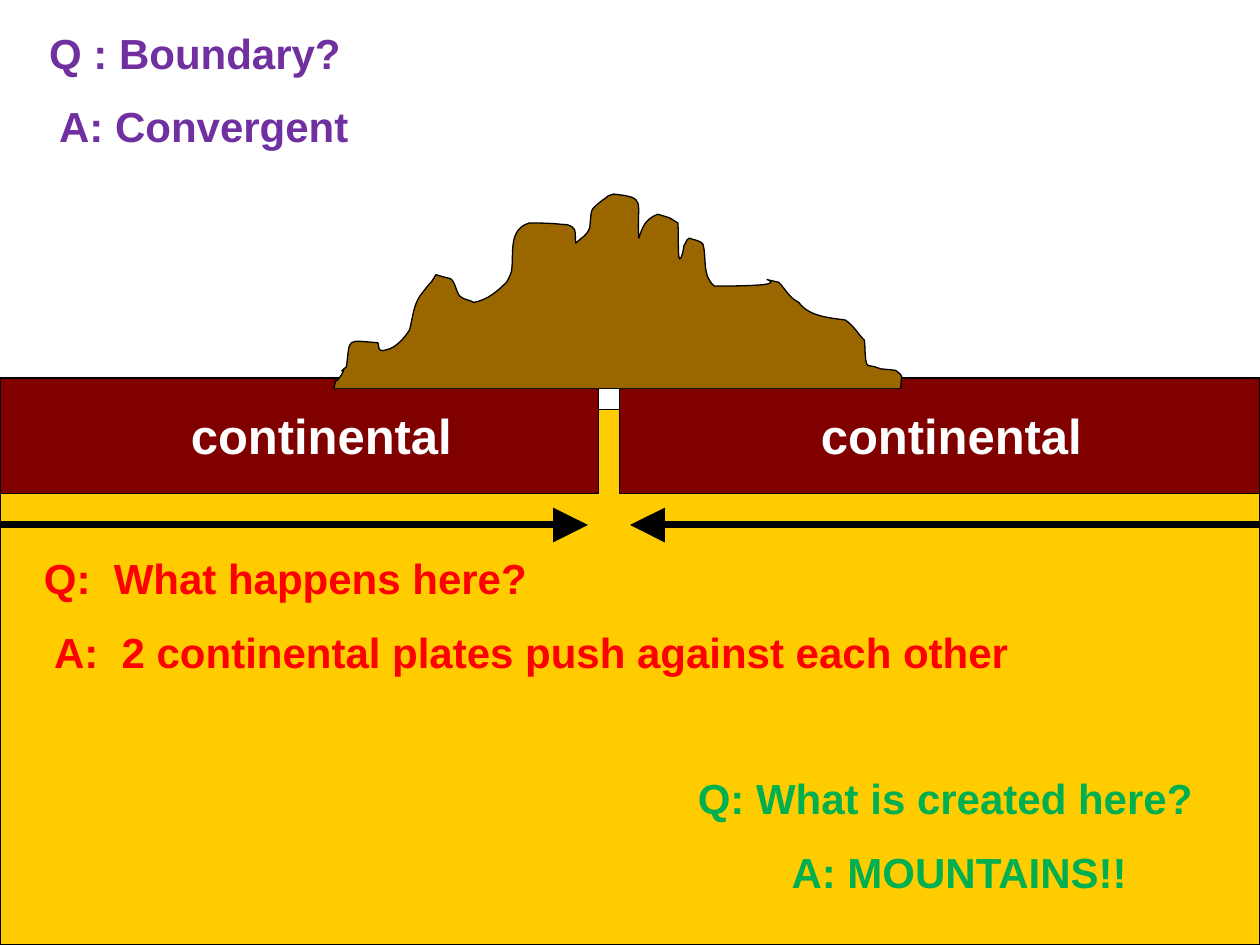
from dataclasses import dataclass

from lxml.etree import SubElement
from pptx import Presentation
from pptx.dml.color import RGBColor
from pptx.enum.shapes import MSO_CONNECTOR, MSO_SHAPE
from pptx.oxml.ns import qn
from pptx.util import Pt

BLACK, WHITE = "000000", "FFFFFF"
MANTLE, PLATE, ROCK = "FFCC00", "800000", "996600"
PURPLE, RED, GREEN = "7030A0", "FF0000", "00B050"
OUTLINE_WIDTH = 0.75
GRID = 0.72  # points per unit of the mountain grid


@dataclass(frozen=True)
class Block:
    left: float
    top: float
    width: float
    height: float
    color: str


@dataclass(frozen=True)
class Label:
    text: str
    left: float
    top: float
    width: float
    color: str
    size: float = 24
    height: float = 36


@dataclass(frozen=True)
class Line:
    start: float
    end: float
    y: float
    width: float
    arrow: bool = True


BLOCKS = [
    Block(0, 234, 720, 306, MANTLE),
    Block(0, 216, 342, 66, PLATE),
    Block(354, 216, 366, 66, PLATE),
]
LINES = [
    Line(0, 336, 300, 4),
    Line(720, 360, 300, 4),
    Line(190.8, 514.8, 222, OUTLINE_WIDTH, arrow=False),
]
LABELS = [
    *(Label("continental", left, 228, 216, WHITE, 28, 41) for left in (102, 462)),
    Label("A: MOUNTAINS!!", 445.2, 480, 214, GREEN),
    Label("Q:  What happens here?", 18, 312, 420, RED),
    Label("A:  2 continental plates push against each other", 23.8, 354.4, 714, RED),
    Label("Q: What is created here?", 391.7, 438, 534, GREEN),
    Label("Q : Boundary?", 21, 12, 387, PURPLE),
    Label("A: Convergent", 26.7, 54, 382, PURPLE),
]

# Mountain outline: start, then two control points and an end for each curve
MOUNTAIN_START = (265, 308)
MOUNTAIN_CURVES = [
    (269, 293, 263, 309, 270, 299), (278, 287, 265, 300, 275, 291),
    (278, 268, 274, 270, 300, 272), (301, 274, 300, 277, 302, 278),
    (304, 279, 307, 277, 309, 277), (316, 274, 321, 268, 325, 262),
    (327, 255, 328, 244, 332, 237), (333, 235, 340, 226, 343, 223),
    (344, 221, 346, 218, 346, 218), (349, 219, 353, 220, 357, 221),
    (361, 222, 362, 232, 365, 235), (368, 238, 373, 238, 376, 240),
    (387, 238, 395, 231, 402, 224), (403, 223, 406, 216, 406, 215),
    (408, 202, 403, 182, 420, 177), (428, 177, 437, 177, 445, 178),
    (448, 178, 451, 178, 454, 180), (458, 182, 456, 188, 457, 193),
    (462, 188, 465, 188, 468, 181), (470, 165, 467, 168, 478, 159),
    (486, 154, 478, 157, 487, 154), (514, 157, 505, 159, 507, 189),
    (510, 180, 512, 174, 522, 170), (535, 174, 530, 172, 538, 177),
    (539, 188, 537, 218, 542, 200), (543, 198, 542, 195, 544, 193),
    (544, 191, 546, 190, 547, 189), (549, 190, 557, 191, 558, 194),
    (561, 205, 557, 219, 567, 227), (580, 227, 592, 227, 605, 226),
    (624, 224, 595, 219, 618, 224), (624, 230, 626, 236, 634, 240),
    (642, 251, 657, 252, 671, 254), (678, 259, 681, 265, 686, 270),
    (687, 277, 686, 283, 688, 289), (689, 291, 692, 290, 694, 291),
    (703, 294, 695, 292, 711, 294), (718, 300, 715, 296, 715, 308),
]


def rgb(color: str) -> RGBColor:
    return RGBColor.from_string(color)


def style_shape(shape, color: str) -> None:
    shape.shadow.inherit = False
    shape.fill.solid()
    shape.fill.fore_color.rgb = rgb(color)
    shape.line.color.rgb = rgb(BLACK)
    shape.line.width = Pt(OUTLINE_WIDTH)


def draw_block(slide, block: Block) -> None:
    shape = slide.shapes.add_shape(
        MSO_SHAPE.RECTANGLE, Pt(block.left), Pt(block.top), Pt(block.width), Pt(block.height))
    style_shape(shape, block.color)


def draw_line(slide, line: Line) -> None:
    connector = slide.shapes.add_connector(
        MSO_CONNECTOR.STRAIGHT, Pt(line.start), Pt(line.y), Pt(line.end), Pt(line.y))
    connector.line.color.rgb = rgb(BLACK)
    connector.line.width = Pt(line.width)
    properties = connector._element.spPr
    if line.arrow:
        SubElement(properties.find(qn("a:ln")), qn("a:tailEnd"),
                   type="triangle", w="lg", len="lg")
    SubElement(properties, qn("a:effectLst"))


def bend_segments(shape) -> None:
    """Join every three straight segments into one cubic curve."""
    outline = next(shape._element.iter(qn("a:path")))
    segments = outline.findall(qn("a:lnTo"))
    for index in range(0, len(segments), 3):
        curve = SubElement(outline, qn("a:cubicBezTo"))
        for segment in segments[index:index + 3]:
            curve.append(segment[0])
            outline.remove(segment)


def draw_mountain(slide) -> None:
    points = [MOUNTAIN_START]
    for curve in MOUNTAIN_CURVES:
        points += zip(curve[::2], curve[1::2])
    first, *rest = [(Pt(x * GRID), Pt(y * GRID)) for x, y in points]
    builder = slide.shapes.build_freeform(*first)
    builder.add_line_segments(rest, close=False)
    mountain = builder.convert_to_shape()
    bend_segments(mountain)
    style_shape(mountain, ROCK)


def draw_label(slide, label: Label) -> None:
    box = slide.shapes.add_textbox(
        Pt(label.left), Pt(label.top), Pt(label.width), Pt(label.height))
    box.text_frame.word_wrap = True
    run = box.text_frame.paragraphs[0].add_run()
    run.text = label.text
    font_format = {"name": "Arial", "size": Pt(label.size), "bold": True}
    for attribute, value in font_format.items():
        setattr(run.font, attribute, value)
    run.font.color.rgb = rgb(label.color)


def main() -> None:
    presentation = Presentation()
    presentation.slide_width, presentation.slide_height = Pt(720), Pt(540)
    slide = presentation.slides.add_slide(presentation.slide_layouts[6])

    # Mantle and plates
    for block in BLOCKS:
        draw_block(slide, block)
    # Plate movement and mountain base
    for line in LINES:
        draw_line(slide, line)
    draw_mountain(slide)
    # Plate names, questions and answers
    for label in LABELS:
        draw_label(slide, label)

    presentation.save("out.pptx")


if __name__ == "__main__":
    main()
